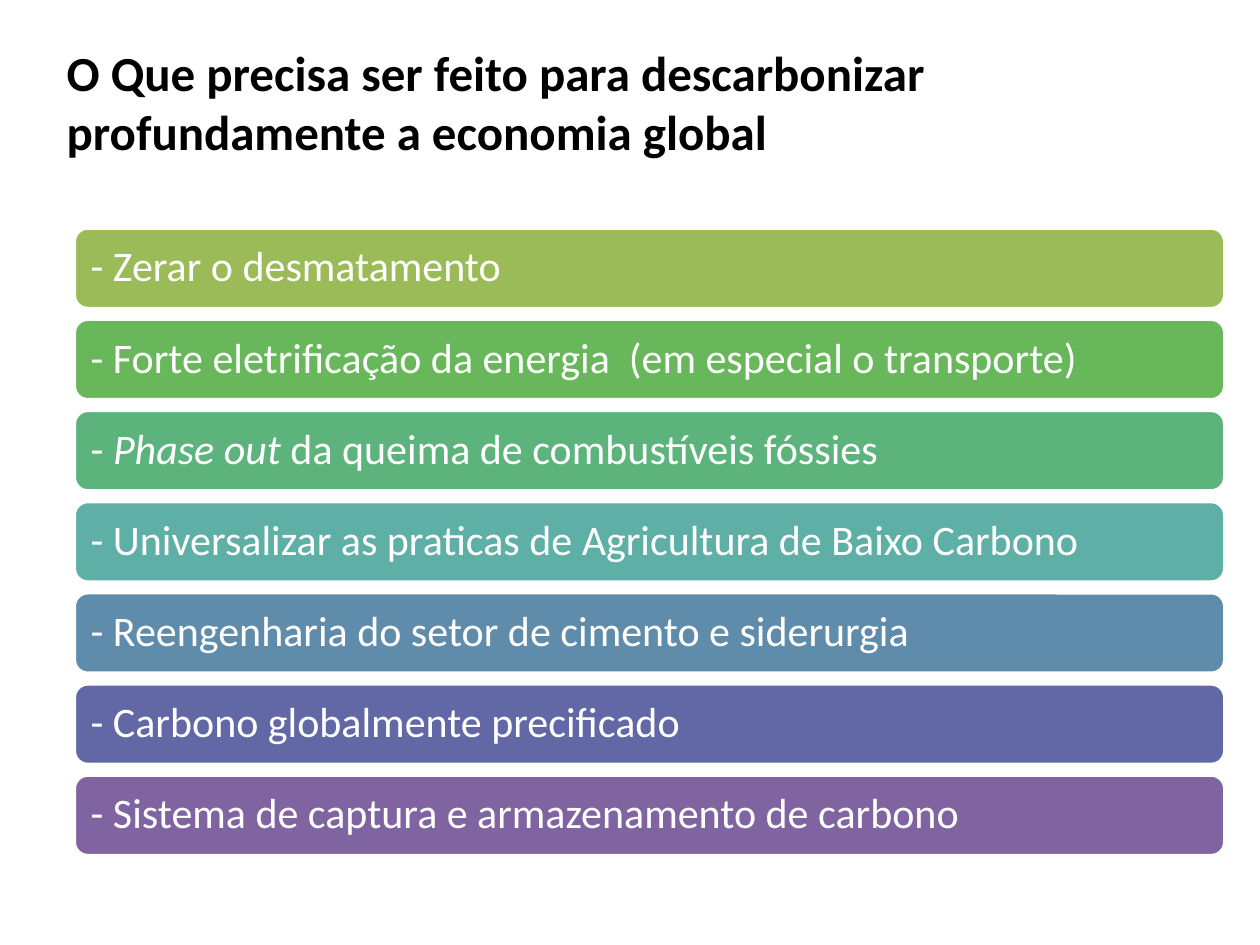
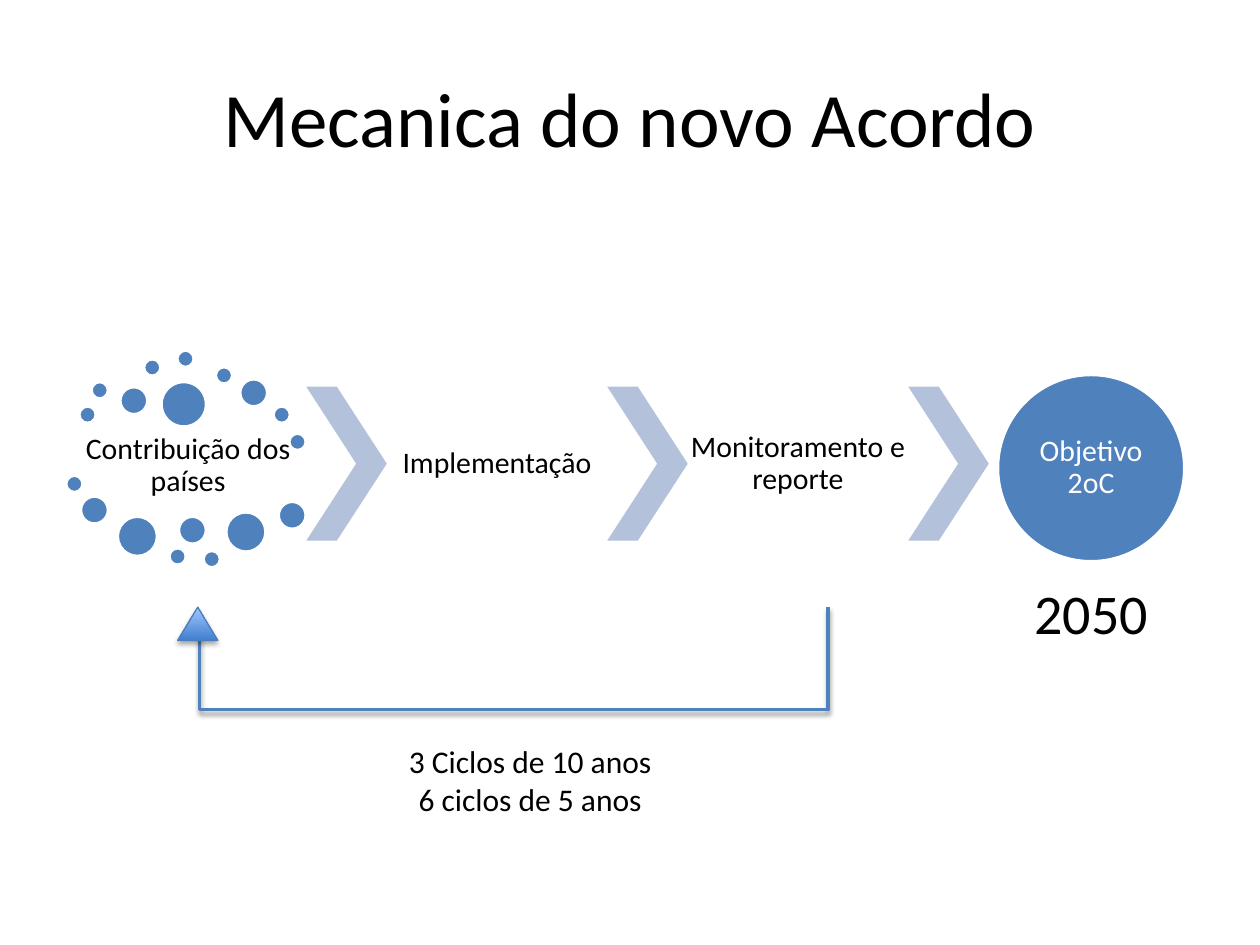
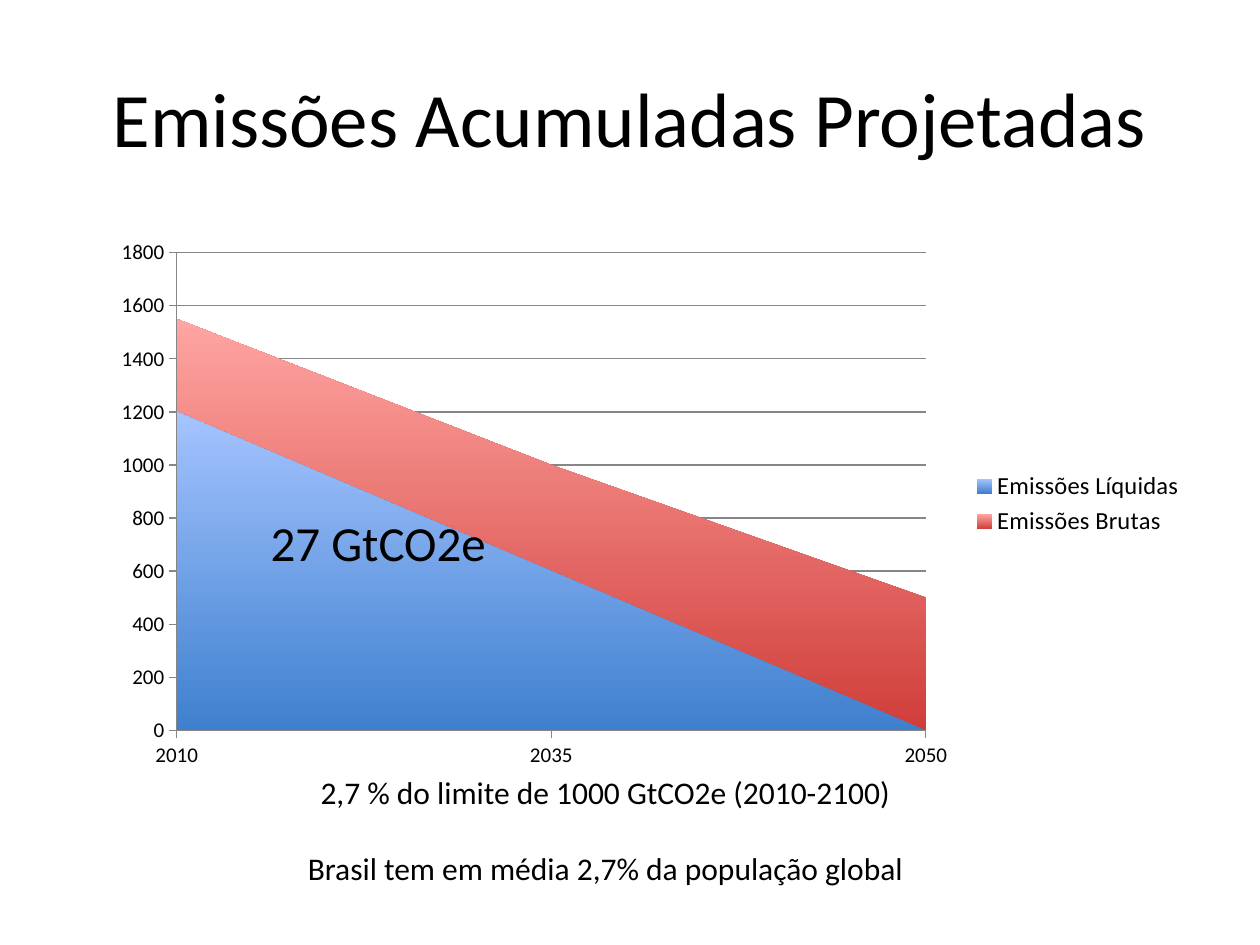
from lxml import etree
from pptx import Presentation
from pptx.chart.data import CategoryChartData
from pptx.dml.color import RGBColor
from pptx.enum import chart as charts, shapes, text
from pptx.oxml.ns import qn
from pptx.util import Pt

FONT = "Calibri"
COLOURS = {
    "black": "000000", "white": "FFFFFF", "blue": "4F81BD", "chevron": "B3C1DB",
    "arrow_edge": "4B7EBC", "axis": "868686",
    "blue_dark": "3F80CE", "blue_light": "A4C4FF",
    "red_dark": "D03E3A", "red_light": "FFA5A2",
    "action1": "9BBB59", "action2": "69B75B", "action3": "5CB37C", "action4": "5EAFA6",
    "action5": "608CAB", "action6": "6267A6", "action7": "8064A2",
}

# Each action is a list of (text, italic) runs.
ACTIONS = [
    [("- Zerar o desmatamento", False)],
    [("- Forte eletrificação da energia  (em especial o transporte)", False)],
    [("- ", False), ("Phase out ", True), ("da queima de combustíveis fóssies", False)],
    [("- Universalizar as praticas de Agricultura de Baixo Carbono", False)],
    [("- Reengenharia do setor de cimento e siderurgia", False)],
    [("- Carbono globalmente precificado", False)],
    [("- Sistema de captura e armazenamento de carbono", False)],
]

# Top left corners of the dots around the contributions, by diameter.
DOTS = {
    10: [(45, 232), (52, 218), (82, 205), (101, 200), (123, 209.5), (156, 232),
         (165, 247.5), (37.5, 271.5), (96.5, 313), (116, 314.5)],
    16: [(68.5, 221), (137, 216.5), (46, 283.5), (102, 295), (159, 286.5)],
    23: [(67, 295), (129, 292.5)],
    26: [(92, 218)],
}


def colour(name):
    return RGBColor.from_string(COLOURS[name])


def points(*lengths):
    return [Pt(length) for length in lengths]


def write(shape, *paragraphs, size=18, color="black", bold=False, align="LEFT", anchor="TOP",
          wrap=True, insets=(7.2, 3.6), line_spacing=None, gap=0):
    """Fill a shape with paragraphs, each a string or a list of (text, italic) runs."""
    frame = shape.text_frame
    frame.word_wrap = wrap
    frame.vertical_anchor = text.MSO_ANCHOR[anchor]
    frame.margin_left = frame.margin_right = Pt(insets[0])
    frame.margin_top = frame.margin_bottom = Pt(insets[1])
    for index, content in enumerate(paragraphs):
        paragraph = frame.add_paragraph() if index else frame.paragraphs[0]
        paragraph.alignment = text.PP_ALIGN[align]
        if line_spacing:
            paragraph.line_spacing = line_spacing
        if index and gap:
            paragraph.space_before = Pt(gap)
        runs = [(content, False)] if isinstance(content, str) else content
        for words, italic in runs:
            run = paragraph.add_run()
            run.text = words
            run.font.name, run.font.size = FONT, Pt(size)
            run.font.bold, run.font.italic = bold, italic
            run.font.color.rgb = colour(color)


def add_text(slide, box, *paragraphs, **format_options):
    write(slide.shapes.add_textbox(*points(*box)), *paragraphs, **format_options)


def add_title(slide, title):
    add_text(slide, (36, 21.6, 648, 90), title, size=44, align="CENTER", anchor="MIDDLE")


def add_step_label(slide, box, label):
    add_text(slide, box, label, size=17, align="CENTER", anchor="MIDDLE",
             insets=(1.4, 1.4), line_spacing=0.9)


def set_line(shape, color, width):
    shape.line.color.rgb = colour(color)
    shape.line.width = Pt(width)


def add_filled(slide, kind, box, fill, line=None, line_width=2):
    shape = slide.shapes.add_shape(shapes.MSO_SHAPE[kind], *points(*box))
    shape.shadow.inherit = False
    shape.fill.solid()
    shape.fill.fore_color.rgb = colour(fill)
    if line:
        set_line(shape, line, line_width)
    else:
        shape.line.fill.background()
    return shape


def fill_upwards(fill, bottom, top):
    fill.gradient()
    fill.gradient_angle = 90
    for stop, name in zip(fill.gradient_stops, (bottom, top)):
        stop.color.rgb = colour(name)


def cast_shadow(shape, opacity, distance):
    shape.shadow.inherit = False
    effects = shape._element.spPr.find(qn("a:effectLst"))
    shadow = etree.SubElement(effects, qn("a:outerShdw"), blurRad=str(Pt(3.1)),
                              dist=str(Pt(distance)), dir="5400000", rotWithShape="0")
    tint = etree.SubElement(shadow, qn("a:srgbClr"), val=COLOURS["black"])
    etree.SubElement(tint, qn("a:alpha"), val=str(opacity * 1000))


def add_return_arrow(slide):
    corners = [points(*corner) for corner in ((473, 347), (473, 405.5), (114, 405.5), (114, 356))]
    builder = slide.shapes.build_freeform(*corners[0], scale=1.0)
    builder.add_line_segments(corners[1:], close=False)
    path_back = builder.convert_to_shape()
    path_back.fill.background()
    set_line(path_back, "blue", 2)
    cast_shadow(path_back, 38, 1.6)

    head = add_filled(slide, "ISOSCELES_TRIANGLE", (101.5, 347, 23, 19), "blue",
                      "arrow_edge", 0.75)
    fill_upwards(head.fill, "blue_dark", "blue_light")
    cast_shadow(head, 35, 1.8)


def style_axis(axis):
    axis.tick_labels.font.size = Pt(12)
    axis.major_tick_mark = charts.XL_TICK_MARK.OUTSIDE
    axis.minor_tick_mark = charts.XL_TICK_MARK.NONE
    axis.format.line.color.rgb = colour("axis")


def add_emissions_chart(slide, box):
    data = CategoryChartData()
    data.categories = ["2010", "2035", "2050"]
    data.add_series("Emissões Líquidas", (1200, 600, 0))
    data.add_series("Emissões Brutas", (1550, 1000, 500))
    chart = slide.shapes.add_chart(charts.XL_CHART_TYPE.AREA, *points(*box), data).chart
    chart.has_title = False
    chart.font.name, chart.font.size = FONT, Pt(10)
    chart.font.color.rgb = colour("black")
    for series, hue in zip(chart.plots[0].series, ("blue", "red")):
        fill_upwards(series.format.fill, f"{hue}_dark", f"{hue}_light")
        series.format.line.fill.background()

    chart.has_legend = True
    chart.legend.position = charts.XL_LEGEND_POSITION.RIGHT
    chart.legend.include_in_layout = False
    chart.legend.font.size = Pt(14)

    values = chart.value_axis
    style_axis(chart.category_axis)
    style_axis(values)
    chart.category_axis.has_major_gridlines = False
    values.minimum_scale, values.maximum_scale, values.major_unit = 0, 1800, 200
    values.has_major_gridlines = True
    values.major_gridlines.format.line.color.rgb = colour("axis")
    for crossing in values._element.iter(qn("c:crossBetween")):
        crossing.set("val", "midCat")


def build_actions(slide):
    for index, action in enumerate(ACTIONS):
        bar = add_filled(slide, "ROUNDED_RECTANGLE", (42.5, 130.3 + 52.1 * index, 657.4, 46),
                         f"action{index + 1}", "white")
        write(bar, action, size=24, color="white", anchor="MIDDLE",
              insets=(7.2, 7.2), line_spacing=0.9)
    add_text(slide, (31, 21, 646.5, 75),
             "O Que precisa ser feito para descarbonizar profundamente a economia global",
             size=28, bold=True)


def build_mechanics(slide):
    add_title(slide, "Mecanica do novo Acordo")
    for diameter, corners in DOTS.items():
        for left, top in corners:
            add_filled(slide, "OVAL", (left, top, diameter, diameter), "blue", "white")
    add_step_label(slide, (44.5, 245, 126, 42), "Contribuição dos países")
    for index in range(3):
        chevron = add_filled(slide, "CHEVRON", (175 + 172 * index, 221, 46, 88), "chevron")
        chevron.adjustments[0] = 0.62
    for index, label in enumerate(("Implementação", "Monitoramento e reporte")):
        add_step_label(slide, (221 + 172 * index, 221, 126, 88), label)
    goal = add_filled(slide, "OVAL", (570, 214, 107, 107), "blue", "white")
    write(goal, "Objetivo 2oC", size=17, color="white", align="CENTER", anchor="MIDDLE",
          insets=(0, 0), line_spacing=0.9)
    add_return_arrow(slide)
    add_text(slide, (225.5, 420.5, 155, 51), "3 Ciclos de 10 anos", "6 ciclos de 5 anos",
             align="CENTER", wrap=False)
    add_text(slide, (584, 327, 80, 46), "2050", size=32, wrap=False)


def build_emissions(slide):
    add_title(slide, "Emissões Acumuladas Projetadas")
    add_text(slide, (166.5, 438, 359, 73), "2,7 % do limite de 1000 GtCO2e (2010-2100)",
             "Brasil tem em média 2,7% da população global", align="CENTER", wrap=False, gap=22)
    add_emissions_chart(slide, (57, 131, 627, 314))
    add_text(slide, (147.6, 289.5, 139, 41), "27 GtCO2e", size=28, wrap=False)


def main():
    presentation = Presentation()
    presentation.slide_width, presentation.slide_height = points(720, 540)
    for build in (build_actions, build_mechanics, build_emissions):
        build(presentation.slides.add_slide(presentation.slide_layouts[6]))
    presentation.save("out.pptx")


if __name__ == "__main__":
    main()
